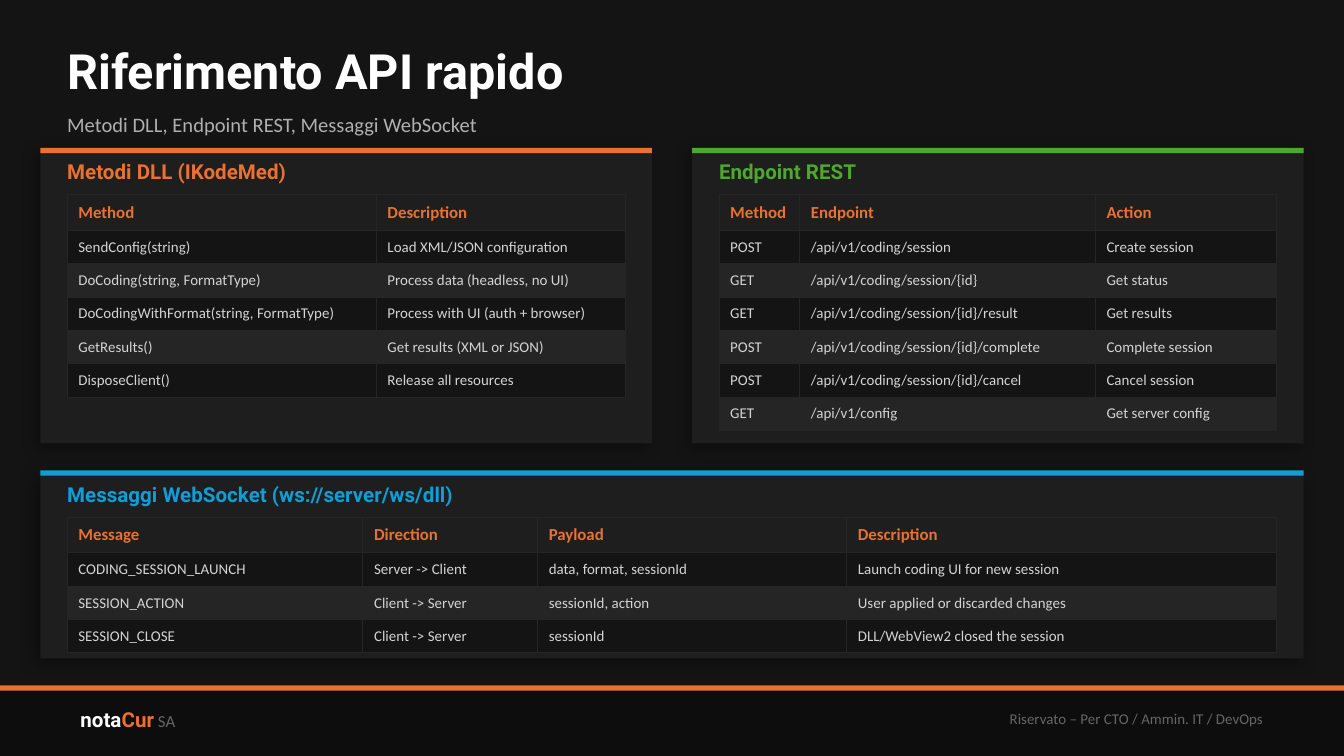
"""Build the quick API reference slide."""
from dataclasses import dataclass

from lxml import etree
from pptx import Presentation
from pptx.dml.color import RGBColor
from pptx.enum.shapes import MSO_SHAPE
from pptx.enum.text import MSO_ANCHOR, MSO_AUTO_SIZE, PP_ALIGN
from pptx.oxml.ns import qn
from pptx.util import Inches, Pt

RECT = MSO_SHAPE.RECTANGLE
MIDDLE = MSO_ANCHOR.MIDDLE
NO_FIT = MSO_AUTO_SIZE.NONE
LEFT, RIGHT = PP_ALIGN.LEFT, PP_ALIGN.RIGHT
SLIDE_W, SLIDE_H = 10, 10 * 9 / 16
FOOTER_Y = 5.1


@dataclass(frozen=True)
class Theme:
    """Colours, fonts and type sizes of the slide."""
    bg: str = "141414"
    footer: str = "0D0D0D"
    panel: str = "1E1E1E"
    band: str = "252525"
    shadow: str = "000000"
    orange: str = "E97132"
    green: str = "4EA72E"
    blue: str = "0F9ED5"
    white: str = "FFFFFF"
    subtitle: str = "B0B0B0"
    cell: str = "D4D4D4"
    muted: str = "666666"
    head_font: str = "Roboto"
    body_font: str = "Calibri"
    title_size: int = 26
    heading_size: int = 11
    label_size: int = 9
    small_size: int = 8


T = Theme()


@dataclass(frozen=True)
class Box:
    """Left, top, width and height in inches."""
    x: float
    y: float
    w: float
    h: float

    def emu(self) -> tuple:
        """Return the four lengths for python-pptx."""
        return tuple(Inches(v) for v in (self.x, self.y, self.w, self.h))


@dataclass(frozen=True)
class Span:
    """A run of text with its format."""
    text: str
    size: int
    color: str
    font: str = T.body_font
    bold: bool = False


@dataclass(frozen=True)
class Panel:
    """A titled card that holds one table."""
    box: Box
    color: str
    title: str
    cols: tuple
    rows: tuple


PANELS = (
    Panel(Box(0.3, 1.1, 4.55, 2.2), T.orange, "Metodi DLL (IKodeMed)", (2.3, 1.85), (
        ("Method", "Description"),
        ("SendConfig(string)", "Load XML/JSON configuration"),
        ("DoCoding(string, FormatType)", "Process data (headless, no UI)"),
        ("DoCodingWithFormat(string, FormatType)", "Process with UI (auth + browser)"),
        ("GetResults()", "Get results (XML or JSON)"),
        ("DisposeClient()", "Release all resources"),
    )),
    Panel(Box(5.15, 1.1, 4.55, 2.2), T.green, "Endpoint REST", (0.6, 2.2, 1.35), (
        ("Method", "Endpoint", "Action"),
        ("POST", "/api/v1/coding/session", "Create session"),
        ("GET", "/api/v1/coding/session/{id}", "Get status"),
        ("GET", "/api/v1/coding/session/{id}/result", "Get results"),
        ("POST", "/api/v1/coding/session/{id}/complete", "Complete session"),
        ("POST", "/api/v1/coding/session/{id}/cancel", "Cancel session"),
        ("GET", "/api/v1/config", "Get server config"),
    )),
    Panel(Box(0.3, 3.5, 9.4, 1.4), T.blue, "Messaggi WebSocket (ws://server/ws/dll)",
          (2.2, 1.3, 2.3, 3.2), (
        ("Message", "Direction", "Payload", "Description"),
        ("CODING_SESSION_LAUNCH", "Server -> Client", "data, format, sessionId",
         "Launch coding UI for new session"),
        ("SESSION_ACTION", "Client -> Server", "sessionId, action",
         "User applied or discarded changes"),
        ("SESSION_CLOSE", "Client -> Server", "sessionId",
         "DLL/WebView2 closed the session"),
    )),
)


def write(tf, spans: tuple, align=LEFT) -> None:
    """Fill the first paragraph of a text frame."""
    p = tf.paragraphs[0]
    p.alignment = align
    for span in spans:
        r = p.add_run()
        r.text = span.text
        formats = {"name": span.font, "size": Pt(span.size), "bold": span.bold}
        for name, value in formats.items():
            setattr(r.font, name, value)
        r.font.color.rgb = RGBColor.from_string(span.color)


def set_frame(tf, inset: bool) -> None:
    """Wrap and centre a text frame vertically, with or without insets."""
    formats = {"word_wrap": True, "auto_size": NO_FIT, "vertical_anchor": MIDDLE}
    if not inset:
        formats |= dict.fromkeys(
            ("margin_left", "margin_top", "margin_right", "margin_bottom"), 0)
    for name, value in formats.items():
        setattr(tf, name, value)


def add_text(s, box: Box, *spans: Span, align=LEFT, inset: bool = False) -> None:
    """Add a text box."""
    tf = s.shapes.add_textbox(*box.emu()).text_frame
    set_frame(tf, inset)
    write(tf, spans, align)


def add_rect(s, box: Box, color: str, shadow: bool = False) -> None:
    """Add a plain rectangle, with a soft shadow if asked."""
    sp = s.shapes.add_shape(RECT, *box.emu())
    sp.fill.solid()
    sp.fill.fore_color.rgb = RGBColor.from_string(color)
    sp.line.fill.background()
    sp.shadow.inherit = False
    if shadow:
        effects = sp.element.spPr.find(qn("a:effectLst"))
        outer = etree.SubElement(
            effects, qn("a:outerShdw"), blurRad=str(Pt(8)), dist=str(Pt(3)),
            dir=str(135 * 60000), algn="bl", rotWithShape="0")
        clr = etree.SubElement(outer, qn("a:srgbClr"), val=T.shadow)
        etree.SubElement(clr, qn("a:alpha"), val="35000")


def format_cell(cell, span: Span, fill: str) -> None:
    """Write a table cell and set its borders, margins and fill."""
    tc_pr = cell._tc.get_or_add_tcPr()
    for side in "LRTB":
        ln = etree.SubElement(tc_pr, qn(f"a:ln{side}"), w=str(Pt(0.5)))
        line_fill = etree.SubElement(ln, qn("a:solidFill"))
        etree.SubElement(line_fill, qn("a:srgbClr"), val=T.band)
    cell.fill.solid()
    cell.fill.fore_color.rgb = RGBColor.from_string(fill)
    formats = {"margin_left": Pt(6), "margin_right": Pt(6),
               "margin_top": Pt(4), "margin_bottom": Pt(4),
               "vertical_anchor": MIDDLE}
    for name, value in formats.items():
        setattr(cell, name, value)
    write(cell.text_frame, (span,))


def add_grid(s, box: Box, panel: Panel) -> None:
    """Add the table of a panel."""
    table = s.shapes.add_table(len(panel.rows), len(panel.cols), *box.emu()).table
    table.first_row = table.horz_banding = False
    for col, width in zip(table.columns, panel.cols):
        col.width = Inches(width)
    for i, row in enumerate(panel.rows):
        table.rows[i].height = Inches(0.24 if i else 0.26)
        fill = (T.bg if i % 2 else T.band) if i else T.panel
        for j, text in enumerate(row):
            span = (Span(text, T.small_size, T.cell) if i
                    else Span(text, T.label_size, T.orange, bold=True))
            format_cell(table.cell(i, j), span, fill)


def add_panel(s, panel: Panel) -> None:
    """Add a card with its accent bar, heading and table."""
    b = panel.box
    x, w = b.x + 0.2, b.w - 0.4
    add_rect(s, b, T.panel, shadow=True)
    add_rect(s, Box(b.x, b.y, b.w, 0.04), panel.color)
    add_text(s, Box(x, b.y + 0.05, w, 0.25),
             Span(panel.title, T.heading_size, panel.color, T.head_font, True))
    add_grid(s, Box(x, b.y + 0.35, w, 1), panel)


def main() -> None:
    """Build and save the slide."""
    prs = Presentation()
    prs.slide_width, prs.slide_height = Inches(SLIDE_W), Inches(SLIDE_H)
    s = prs.slides.add_slide(prs.slide_layouts[5])
    s.background.fill.solid()
    s.background.fill.fore_color.rgb = RGBColor.from_string(T.bg)

    add_rect(s, Box(0, FOOTER_Y, SLIDE_W, SLIDE_H - FOOTER_Y), T.footer)
    add_rect(s, Box(0, FOOTER_Y, SLIDE_W, 0.04), T.orange)
    add_text(s, Box(0.5, 5.15, 3, 0.4),
             Span("nota", T.heading_size, T.white, T.head_font, True),
             Span("Cur", T.heading_size, T.orange, T.head_font, True),
             Span(" SA", T.label_size, T.muted), inset=True)
    add_text(s, Box(5.5, 5.15, 4, 0.4),
             Span("Riservato – Per CTO / Ammin. IT / DevOps", T.small_size, T.muted),
             align=RIGHT, inset=True)

    title = s.shapes.title
    title.left, title.top, title.width, title.height = Box(0.5, 0.25, 9, 0.55).emu()
    set_frame(title.text_frame, inset=False)
    write(title.text_frame, (
        Span("Riferimento API rapido", T.title_size, T.white, T.head_font, True),))
    add_text(s, Box(0.5, 0.75, 9, 0.35),
             Span("Metodi DLL, Endpoint REST, Messaggi WebSocket",
                  T.heading_size, T.subtitle))
    for panel in PANELS:
        add_panel(s, panel)
    prs.save("out.pptx")


if __name__ == "__main__":
    main()
